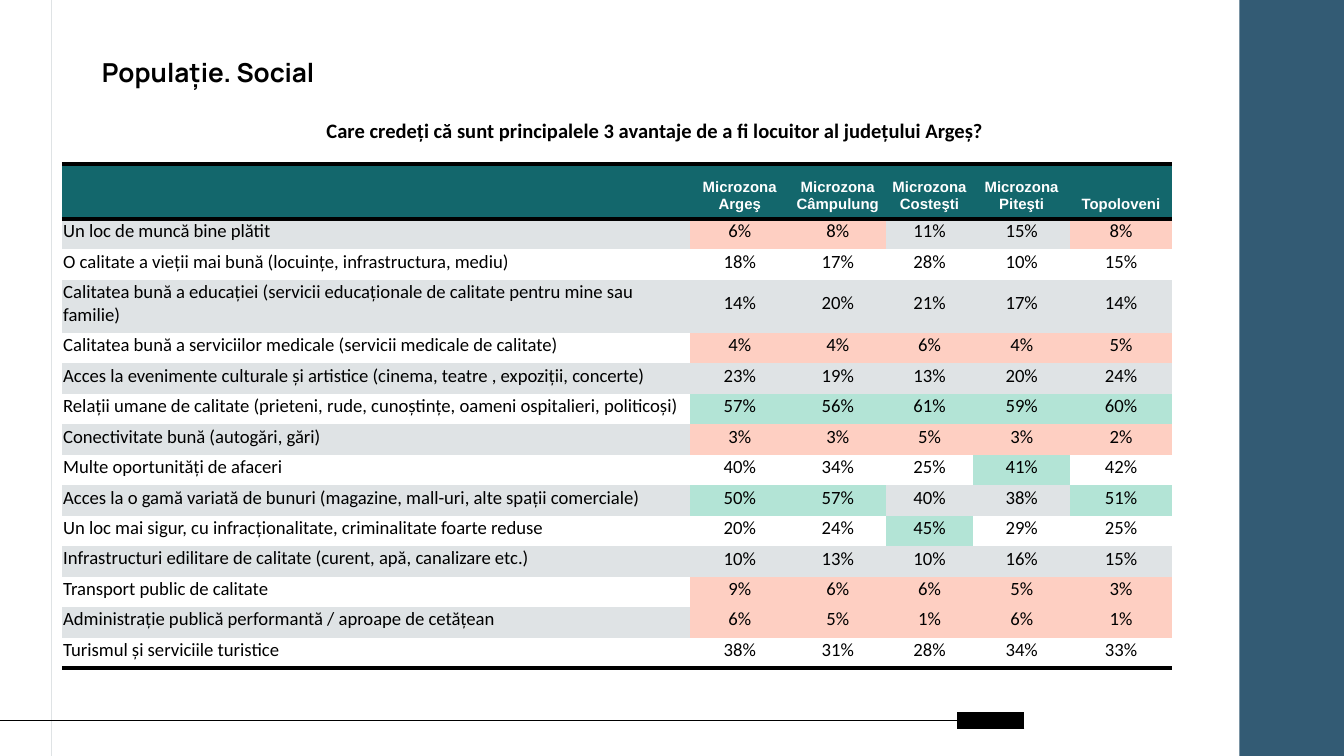
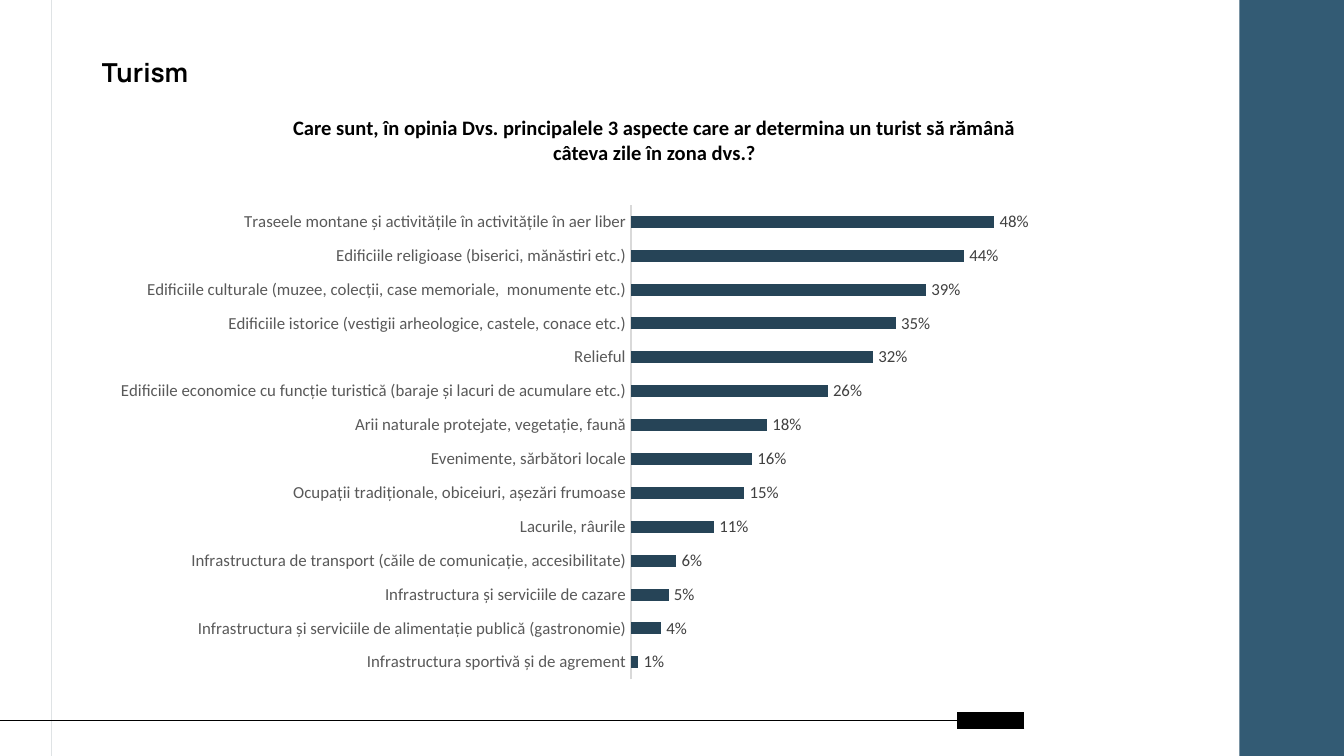
from dataclasses import dataclass

from lxml import etree
from pptx import Presentation
from pptx import util as u
from pptx.chart.data import CategoryChartData
from pptx.dml.color import RGBColor
from pptx.enum import chart as ch, shapes, text
from pptx.oxml import parse_xml
from pptx.oxml.ns import nsdecls, qn

Pt = u.Pt
WIDTH, HEIGHT = 720, 405
BLACK, WHITE, GREY = "000000", "FFFFFF", "DFE3E5"
BAND, HEADER, LOW, HIGH = "335B74", "13676C", "FECFC2", "B3E4D6"
BAR, AXIS_LINE, AXIS_TEXT, LABEL_TEXT = "264457", "D9D9D9", "595959", "404040"
NO_TABLE_STYLE = "{2D5ABB26-0587-4C30-8999-92F81FD0307C}"
LOW_LIMIT, TOP_COUNT = 10, 2


@dataclass(frozen=True)
class Rule:
    x1: float
    y1: float
    x2: float
    y2: float
    color: str
    weight: float


@dataclass(frozen=True)
class Style:
    font: str
    size: float
    color: str = BLACK
    bold: bool = False


@dataclass(frozen=True)
class Box:
    x: float
    y: float
    w: float
    h: float


RULES = [
    Rule(27.5, -3, 27.5, 407.5, GREY, 0.75),
    Rule(548.8, 386, 512.5, 386, BLACK, 9),
    Rule(512.5, 386, -6.5, 386, BLACK, 0.75),
]
TITLE = Style("Manrope", 14, bold=True)
QUESTION = Style("Calibri", 11, bold=True)
HEAD = Style("Arial", 8, WHITE, True)
BODY = Style("Calibri", 10)

ZONES = ["Microzona Argeş", "Microzona Câmpulung", "Microzona Costeşti",
         "Microzona Piteşti", "Topoloveni"]
ADVANTAGES = [
    ("Un loc de muncă bine plătit", (6, 8, 11, 15, 8)),
    ("O calitate a vieții mai bună (locuințe, infrastructura, mediu)", (18, 17, 28, 10, 15)),
    ("Calitatea bună a educației (servicii educaționale de calitate pentru mine sau familie)",
     (14, 20, 21, 17, 14)),
    ("Calitatea bună a serviciilor medicale (servicii medicale de calitate)", (4, 4, 6, 4, 5)),
    ("Acces la evenimente culturale și artistice (cinema, teatre , expoziții, concerte)",
     (23, 19, 13, 20, 24)),
    ("Relații umane de calitate (prieteni, rude, cunoștințe, oameni ospitalieri, politicoși)",
     (57, 56, 61, 59, 60)),
    ("Conectivitate bună (autogări, gări)", (3, 3, 5, 3, 2)),
    ("Multe oportunități de afaceri", (40, 34, 25, 41, 42)),
    ("Acces la o gamă variată de bunuri (magazine, mall-uri, alte spații comerciale)",
     (50, 57, 40, 38, 51)),
    ("Un loc mai sigur, cu infracționalitate, criminalitate foarte reduse", (20, 24, 45, 29, 25)),
    ("Infrastructuri edilitare de calitate (curent, apă, canalizare etc.)", (10, 13, 10, 16, 15)),
    ("Transport public de calitate", (9, 6, 6, 5, 3)),
    ("Administrație publică performantă / aproape de cetățean", (6, 5, 1, 6, 1)),
    ("Turismul și serviciile turistice", (38, 31, 28, 34, 33)),
]
COLUMN_WIDTHS = [336.5, 53.3, 51.7, 46.7, 52, 54.5]
HEAD_HEIGHT, ROW_HEIGHT, TALL_HEIGHT, TALL_ROW = 29.5, 16.3, 28.1, 3

ATTRACTIONS = [
    ("Traseele montane și activitățile în activitățile în aer liber", 0.48),
    ("Edificiile religioase (biserici, mănăstiri etc.)", 0.44),
    ("Edificiile culturale (muzee, colecții, case memoriale,  monumente etc.)", 0.39),
    ("Edificiile istorice (vestigii arheologice, castele, conace etc.)", 0.35),
    ("Relieful", 0.32),
    ("Edificiile economice cu funcție turistică (baraje și lacuri de acumulare etc.)", 0.26),
    ("Arii naturale protejate, vegetație, faună", 0.18),
    ("Evenimente, sărbători locale", 0.16),
    ("Ocupații tradiționale, obiceiuri, așezări frumoase", 0.15),
    ("Lacurile, râurile", 0.11),
    ("Infrastructura de transport (căile de comunicație, accesibilitate)", 0.06),
    ("Infrastructura și serviciile de cazare", 0.05),
    ("Infrastructura și serviciile de alimentație publică (gastronomie)", 0.04),
    ("Infrastructura sportivă și de agrement", 0.01),
]


def rgb(color: str) -> RGBColor:
    return RGBColor.from_string(color)


def set_font(font, style: Style) -> None:
    font.name, font.size, font.bold = style.font, Pt(style.size), style.bold
    font.color.rgb = rgb(style.color)


def paint(fill, color: str) -> None:
    fill.solid()
    fill.fore_color.rgb = rgb(color)


def write(tf, content: str, style: Style, centred: bool) -> None:
    p = tf.paragraphs[0]
    p.text = content
    p.alignment = text.PP_ALIGN.CENTER if centred else text.PP_ALIGN.LEFT
    set_font(p.font, style)


def add_text(s, box: Box, content: str, style: Style, centred: bool = False):
    sp = s.shapes.add_textbox(Pt(box.x), Pt(box.y), Pt(box.w), Pt(box.h))
    sp.text_frame.word_wrap = True
    write(sp.text_frame, content, style, centred)
    return sp.text_frame


def add_rule(s, rule: Rule) -> None:
    sp = s.shapes.add_connector(shapes.MSO_CONNECTOR.STRAIGHT, Pt(rule.x1), Pt(rule.y1),
                                Pt(rule.x2), Pt(rule.y2))
    sp.line.color.rgb = rgb(rule.color)
    sp.line.width = Pt(rule.weight)
    etree.SubElement(sp._element.spPr, qn("a:effectLst"))


def add_base_slide(prs, title: str, question: str, question_box: Box):
    """Add a slide with the side band, rules, title and survey question."""
    s = prs.slides.add_slide(prs.slide_layouts[6])
    band = s.shapes.add_shape(shapes.MSO_SHAPE.RECTANGLE, Pt(664), 0, Pt(56), Pt(HEIGHT))
    band.shadow.inherit = False
    paint(band.fill, BAND)
    band.line.fill.background()
    for rule in RULES:
        add_rule(s, rule)
    tf = add_text(s, Box(47.5, 23, 607, 29), title, TITLE)
    tf.margin_left = tf.margin_right = tf.margin_top = tf.margin_bottom = Pt(7.2)
    tf = add_text(s, question_box, question, QUESTION, centred=True)
    tf.auto_size = text.MSO_AUTO_SIZE.SHAPE_TO_FIT_TEXT
    return s


def add_border(cell, side: str) -> None:
    """Draw a thick black edge; side is T or B. Call before filling the cell."""
    cell._tc.get_or_add_tcPr().append(parse_xml(
        f'<a:ln{side} {nsdecls("a")} w="{Pt(2)}"><a:solidFill><a:srgbClr val="{BLACK}"/>'
        f'</a:solidFill></a:ln{side}>'))


def fill_cell(cell, content: str, style: Style, color: str, centred: bool,
              anchor, borders: str = "") -> None:
    for side in borders:
        add_border(cell, side)
    paint(cell.fill, color)
    cell.margin_left = cell.margin_right = cell.margin_top = Pt(0.7)
    cell.margin_bottom = Pt(3.6)
    cell.vertical_anchor = anchor
    write(cell.text_frame, content, style, centred)


def add_advantages_table(s) -> None:
    """Mark values under the limit as low and the top values of each zone as high."""
    last = len(ADVANTAGES)
    heights = [HEAD_HEIGHT] + [ROW_HEIGHT] * last
    heights[TALL_ROW] = TALL_HEIGHT
    frame = s.shapes.add_table(last + 1, len(COLUMN_WIDTHS), Pt(33.2), Pt(87.8),
                               Pt(sum(COLUMN_WIDTHS)), Pt(sum(heights)))
    table = frame.table
    table.first_row = table.horz_banding = False
    table._tbl.tblPr.find(qn("a:tableStyleId")).text = NO_TABLE_STYLE
    for column, width in zip(table.columns, COLUMN_WIDTHS):
        column.width = Pt(width)
    for row, height in zip(table.rows, heights):
        row.height = Pt(height)

    bottom, middle = text.MSO_ANCHOR.BOTTOM, text.MSO_ANCHOR.MIDDLE
    for j, zone in enumerate(["", *ZONES]):
        fill_cell(table.cell(0, j), zone, HEAD, HEADER, True, bottom, "TB")
    tops = [sorted(values)[-TOP_COUNT:] for values in zip(*(row[1] for row in ADVANTAGES))]
    for i, (label, values) in enumerate(ADVANTAGES, 1):
        stripe = GREY if i % 2 else WHITE
        borders = "B" if i == last else ""
        fill_cell(table.cell(i, 0), label, BODY, stripe, False, bottom, borders)
        for j, (value, top) in enumerate(zip(values, tops), 1):
            color = LOW if value < LOW_LIMIT else HIGH if value in top else stripe
            fill_cell(table.cell(i, j), f"{value}%", BODY, color, True, middle, borders)


def set_plot_area(chart, x: float, y: float, w: float, h: float) -> None:
    """Place the inner plot area, in fractions of the chart."""
    area = chart._chartSpace.chart.plotArea
    for old in area.findall(qn("c:layout")):
        area.remove(old)
    sizes = "".join(f'<c:{k} val="{v}"/>' for k, v in zip("xywh", (x, y, w, h)))
    area.insert(0, parse_xml(
        f'<c:layout {nsdecls("c")}><c:manualLayout><c:layoutTarget val="inner"/>'
        f'<c:xMode val="edge"/><c:yMode val="edge"/>{sizes}</c:manualLayout></c:layout>'))


def add_attractions_chart(s) -> None:
    data = CategoryChartData(number_format="0%")
    data.categories = [label for label, _ in ATTRACTIONS]
    data.add_series("Series 1", [value for _, value in ATTRACTIONS])
    chart = s.shapes.add_chart(ch.XL_CHART_TYPE.BAR_CLUSTERED, Pt(62.6), Pt(109.4),
                               Pt(570.2), Pt(261.4), data).chart
    chart.has_legend = chart.has_title = False
    set_font(chart.font, Style("Arial", 10))
    set_plot_area(chart, 0.483, 0, 0.427, 0.974)

    axis = chart.category_axis
    axis.reverse_order = True
    axis.major_tick_mark = axis.minor_tick_mark = ch.XL_TICK_MARK.NONE
    axis.format.line.color.rgb = rgb(AXIS_LINE)
    axis.format.line.width = Pt(0.75)
    set_font(axis.tick_labels.font, Style("Calibri", 9, AXIS_TEXT))
    values = chart.value_axis
    values.minimum_scale, values.maximum_scale = 0, 0.6
    values.has_major_gridlines = values.visible = False

    plot = chart.plots[0]
    plot.gap_width, plot.vary_by_categories = 182, False
    paint(plot.series[0].format.fill, BAR)
    labels = plot.series[0].data_labels
    labels.show_value = True
    labels.position = ch.XL_LABEL_POSITION.OUTSIDE_END
    labels.number_format, labels.number_format_is_linked = "0%", False
    set_font(labels.font, Style("Calibri", 9, LABEL_TEXT))


def main() -> None:
    prs = Presentation()
    prs.slide_width, prs.slide_height = Pt(WIDTH), Pt(HEIGHT)
    s = add_base_slide(
        prs, "Populație. Social",
        "Care credeți că sunt principalele 3 avantaje de a fi locuitor al județului Argeș?",
        Box(134.6, 59.8, 432.7, 20.2))
    add_advantages_table(s)
    s = add_base_slide(
        prs, "Turism",
        "Care sunt, în opinia Dvs. principalele 3 aspecte care ar determina un turist "
        "să rămână câteva zile în zona dvs.?",
        Box(143.3, 58.3, 414.7, 33.8))
    add_attractions_chart(s)
    prs.save("out.pptx")


if __name__ == "__main__":
    main()
